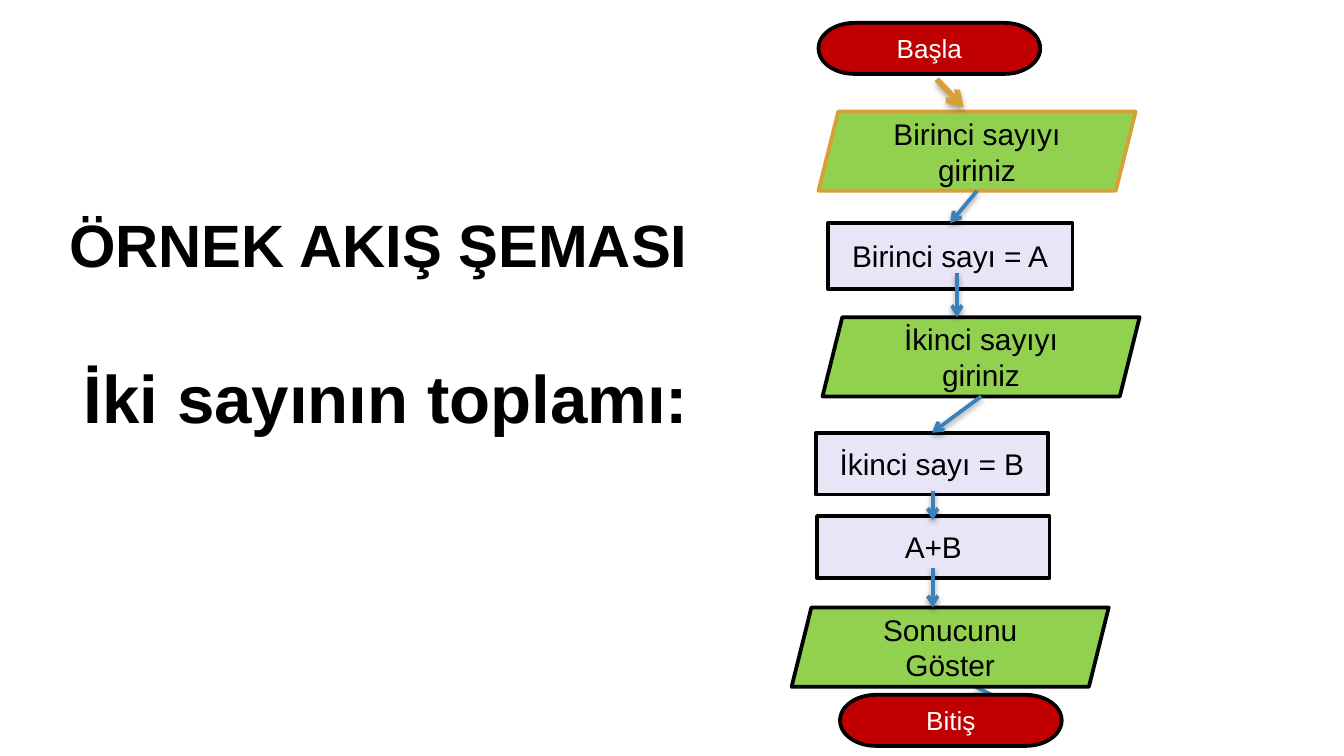
from dataclasses import dataclass

from lxml import etree
from pptx import Presentation
from pptx import util as u
from pptx.dml import color
from pptx.enum import shapes, text
from pptx.oxml import ns


@dataclass(frozen=True)
class Theme:
    font: str = "Arial"
    black: str = "000000"
    white: str = "FFFFFF"
    red: str = "C00000"
    green: str = "92D050"
    lavender: str = "E8E6F6"
    gold: str = "D89F39"
    blue: str = "3A81BA"
    title_size: int = 32
    subtitle_size: int = 36
    step_size: int = 16
    terminal_size: int = 14
    outline: int = 2


THEME = Theme()
SHAPE = shapes.MSO_SHAPE

KINDS = {
    "terminal": (SHAPE.FLOWCHART_TERMINATOR, 1.65, 0.38, THEME.red, THEME.white, THEME.terminal_size),
    "input": (SHAPE.PARALLELOGRAM, 2.36, 0.59, THEME.green, THEME.black, THEME.step_size),
    "process": (SHAPE.RECTANGLE, 1.73, 0.46, THEME.lavender, THEME.black, THEME.step_size),
    "wide process": (SHAPE.RECTANGLE, 1.82, 0.49, THEME.lavender, THEME.black, THEME.step_size),
}

STEPS = [
    ("input", "Birinci sayıyı giriniz", 0.2, 0.66, THEME.gold),
    ("input", "İkinci sayıyı giriniz", 0.23, 2.19, THEME.black),
    ("process", "A+B", 0.19, 3.67, THEME.black),
    ("wide process", "Birinci sayı = A", 0.27, 1.49, THEME.black),
    ("process", "İkinci sayı = B", 0.18, 3.05, THEME.black),
    ("terminal", "Bitiş", 0.36, 5.0, THEME.black),
    ("terminal", "Başla", 0.2, 0, THEME.black),
    ("input", "Sonucunu Göster", 0, 4.35, THEME.black),
]

ARROWS = [
    ((1.38, 1.25), (1.18, 1.49), "Birinci sayı = A"),
    ((1.23, 1.86), (1.23, 2.19), None),
    ((1.41, 2.78), (1.05, 3.05), "İkinci sayı = B"),
    ((1.05, 3.48), (1.05, 3.7), None),
    ((1.05, 4.06), (1.05, 4.35), None),
]


def rgb(value):
    return color.RGBColor.from_string(value)


def write_text(shape, content, *, size, ink=THEME.black, bold=False, wrap=True,
               anchor=text.MSO_ANCHOR.MIDDLE):
    frame = shape.text_frame
    frame.word_wrap = wrap
    frame.vertical_anchor = anchor
    paragraph = frame.paragraphs[0]
    paragraph.alignment = text.PP_ALIGN.CENTER
    run = paragraph.add_run()
    run.text = content
    run.font.name = THEME.font
    run.font.size = u.Pt(size)
    run.font.bold = bold
    run.font.color.rgb = rgb(ink)


def add_step(slide, kind, content, left, top, outline):
    preset, width, height, fill, ink, size = KINDS[kind]
    shape = slide.shapes.add_shape(
        preset, u.Inches(left), u.Inches(top), u.Inches(width), u.Inches(height))
    shape.shadow.inherit = False
    shape.fill.solid()
    shape.fill.fore_color.rgb = rgb(fill)
    shape.line.color.rgb = rgb(outline)
    shape.line.width = u.Pt(THEME.outline)
    write_text(shape, content, size=size, ink=ink)
    return shape


def add_arrow(slide, start, end, *, ink=THEME.blue, width=THEME.outline, target=None,
              shadow_distance=1.6, shadow_opacity=38):
    arrow = slide.shapes.add_connector(
        shapes.MSO_CONNECTOR.STRAIGHT, *(u.Inches(value) for value in (*start, *end)))
    if target is not None:
        arrow.end_connect(target, 0)
    arrow.line.color.rgb = rgb(ink)
    arrow.line.width = u.Pt(width)
    properties = arrow.element.spPr
    etree.SubElement(properties.find(ns.qn("a:ln")), ns.qn("a:tailEnd"), type="arrow")
    effects = etree.SubElement(properties, ns.qn("a:effectLst"))
    shadow = etree.SubElement(
        effects, ns.qn("a:outerShdw"), blurRad=str(u.Pt(3.1)),
        dist=str(u.Pt(shadow_distance)), dir="5400000", rotWithShape="0")
    shade = etree.SubElement(shadow, ns.qn("a:srgbClr"), val=THEME.black)
    etree.SubElement(shade, ns.qn("a:alpha"), val=str(shadow_opacity * 1000))


def add_headings(slide, left, top):
    headings = [
        ("ÖRNEK AKIŞ ŞEMASI ", 0, 0, 5.36, 0.64, THEME.title_size, True),
        ("İki sayının toplamı:", 0.3, 1.1, 4.75, 0.71, THEME.subtitle_size, False),
    ]
    for content, x, y, width, height, size, wrap in headings:
        box = slide.shapes.add_textbox(
            u.Inches(left + x), u.Inches(top + y), u.Inches(width), u.Inches(height))
        write_text(box, content, size=size, bold=True, wrap=wrap, anchor=text.MSO_ANCHOR.TOP)


def add_flowchart(slide, left, top):
    def place(point):
        return left + point[0], top + point[1]

    add_arrow(slide, place((1.37, 4.94)), place((1.84, 5.18)))
    steps = {
        content: add_step(slide, kind, content, *place((x, y)), outline)
        for kind, content, x, y, outline in STEPS
    }
    add_arrow(slide, place((1.08, 0.42)), place((1.28, 0.63)), ink=THEME.gold, width=3,
              shadow_distance=1.8, shadow_opacity=35)
    for start, end, target in ARROWS:
        add_arrow(slide, place(start), place(end), target=steps.get(target))


def main():
    presentation = Presentation()
    presentation.slide_width = u.Inches(10)
    presentation.slide_height = u.Inches(10 * 9 / 16)
    slide = presentation.slides.add_slide(presentation.slide_layouts[6])
    add_flowchart(slide, 5.89, 0.17)
    add_headings(slide, 0.2, 1.5)
    presentation.save("out.pptx")


if __name__ == "__main__":
    main()
